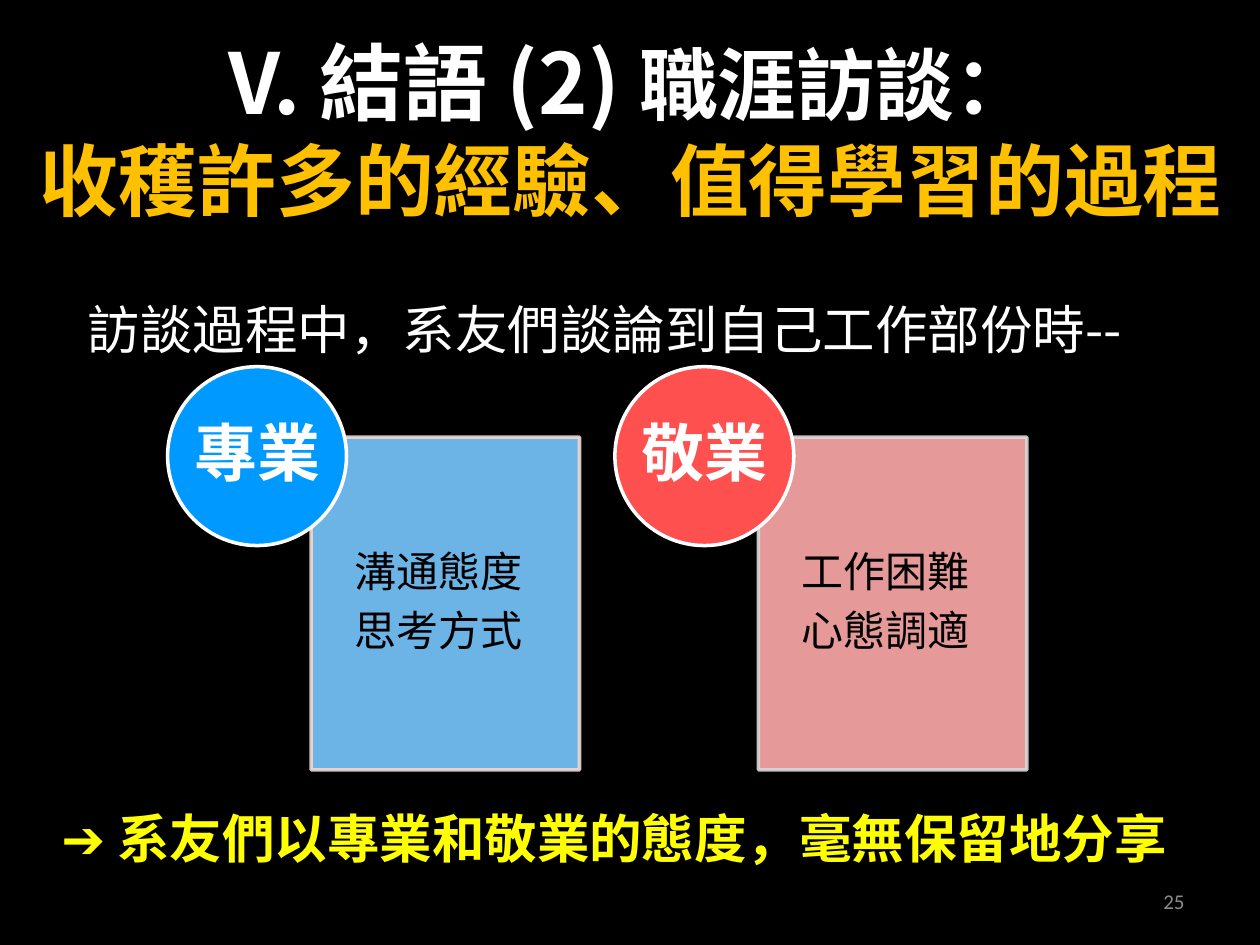
"""Build the closing slide on what the career interviews taught."""
from dataclasses import dataclass

from lxml.etree import SubElement
from pptx import Presentation
from pptx.dml.color import RGBColor
from pptx.enum.shapes import MSO_SHAPE as Shape
from pptx.enum.text import MSO_ANCHOR as Anchor, PP_ALIGN as Align
from pptx.oxml.ns import qn
from pptx.util import Inches, Pt


@dataclass(frozen=True)
class Theme:
    cjk: str = "Noto Sans CJK SC"
    latin: str = "Calibri"
    background: str = "000000"
    white: str = "FFFFFF"
    ink: str = "000000"
    gold: str = "FFC000"
    yellow: str = "FFFF00"
    grey: str = "8C8C8C"
    blue: str = "0099FF"
    red: str = "FF5050"
    light_blue: str = "78C8FF"
    light_red: str = "FFAAAA"
    blue_edge: str = "F2D8CF"
    red_edge: str = "D8D8D8"
    heading: int = 48
    subheading: int = 45
    badge: int = 36
    statement: int = 30
    card: int = 24
    number: int = 12


theme = Theme()


def add_text(paragraph, text, *, size, color, bold=False, font=theme.cjk, align=Align.LEFT):
    paragraph.alignment = align
    run = paragraph.add_run()
    run.text = text
    run.font.size, run.font.bold, run.font.name = Pt(size), bold, font
    run.font.color.rgb = RGBColor.from_string(color)
    SubElement(run.font._element, qn("a:ea")).set("typeface", font)


def add_panel(kind, left, top, width, height, fill, edge, margins, opacity=100):
    panel = slide.shapes.add_shape(kind, Inches(left), Inches(top), Inches(width), Inches(height))
    panel.shadow.inherit = False
    panel.line.width = Pt(2)
    panel.fill.solid()
    for paint, color in ((panel.fill, fill), (panel.line.fill, edge)):
        paint.solid()
        paint.fore_color.rgb = RGBColor.from_string(color)
    if opacity < 100:
        for tint in panel._element.spPr.iter(qn("a:srgbClr")):
            SubElement(tint, qn("a:alpha")).set("val", str(opacity * 1000))
    frame = panel.text_frame
    frame.word_wrap = True
    frame.vertical_anchor = Anchor.MIDDLE
    frame.margin_left, frame.margin_top, frame.margin_right, frame.margin_bottom = map(Inches, margins)
    return frame


deck = Presentation()
deck.slide_width, deck.slide_height = Inches(10), Inches(7.5)
slide = deck.slides.add_slide(deck.slide_layouts[5])
slide.background.fill.solid()
slide.background.fill.fore_color.rgb = RGBColor.from_string(theme.background)

title = slide.shapes.title
title.left, title.top, title.width, title.height = map(Inches, (0.2, 0.25, 9.61, 1.54))
title.text_frame.vertical_anchor = Anchor.MIDDLE
title.text_frame.word_wrap = True
heading = title.text_frame.paragraphs[0]
add_text(heading, "V. 結語 (2) ", size=theme.heading, color=theme.white, bold=True, align=Align.CENTER)
add_text(heading, "職涯訪談：", size=theme.subheading, color=theme.white, bold=True, align=Align.CENTER)
heading.add_line_break()
add_text(heading, "收穫許多的經驗、值得學習的過程", size=theme.subheading, color=theme.gold,
         bold=True, align=Align.CENTER)

statements = [
    ("25", (7.17, 6.95, 2.33, 0.4), True,
     dict(size=theme.number, color=theme.grey, font=theme.latin, align=Align.RIGHT)),
    ("訪談過程中，系友們談論到自己工作部份時--", (0.6, 2.3, 8.56, 0.61), False,
     dict(size=theme.statement, color=theme.white)),
    ("➔ 系友們以專業和敬業的態度，毫無保留地分享", (0.27, 6.34, 9.21, 0.61), True,
     dict(size=theme.statement, color=theme.yellow, bold=True, align=Align.CENTER)),
]
for wording, place, wraps, style in statements:
    statement = slide.shapes.add_textbox(*map(Inches, place)).text_frame
    statement.word_wrap = wraps
    statement.vertical_anchor = Anchor.MIDDLE
    add_text(statement.paragraphs[0], wording, **style)

qualities = [
    ("專業", ("溝通態度", "思考方式"), theme.blue, theme.light_blue, theme.blue_edge),
    ("敬業", ("工作困難", "心態調適"), theme.red, theme.light_red, theme.red_edge),
]
for column, (quality, topics, strong, light, edge) in enumerate(qualities):
    left = 1.33 + column * 3.55
    card = add_panel(Shape.RECTANGLE, left + 1.14, 3.47, 2.13, 2.64, light, edge,
                     (0.34, 0.19, 0.19, 0.19), opacity=90)
    badge = add_panel(Shape.OVAL, left, 2.91, 1.42, 1.42, strong, theme.white, (0, 0, 0, 0))
    for row, topic in enumerate(topics):
        line = card.add_paragraph() if row else card.paragraphs[0]
        line.line_spacing, line.space_after = 0.9, Pt(8)
        add_text(line, topic, size=theme.card, color=theme.ink)
    badge.paragraphs[0].line_spacing = 0.9
    add_text(badge.paragraphs[0], quality, size=theme.badge, color=theme.white, bold=True,
             align=Align.CENTER)

deck.save("out.pptx")
